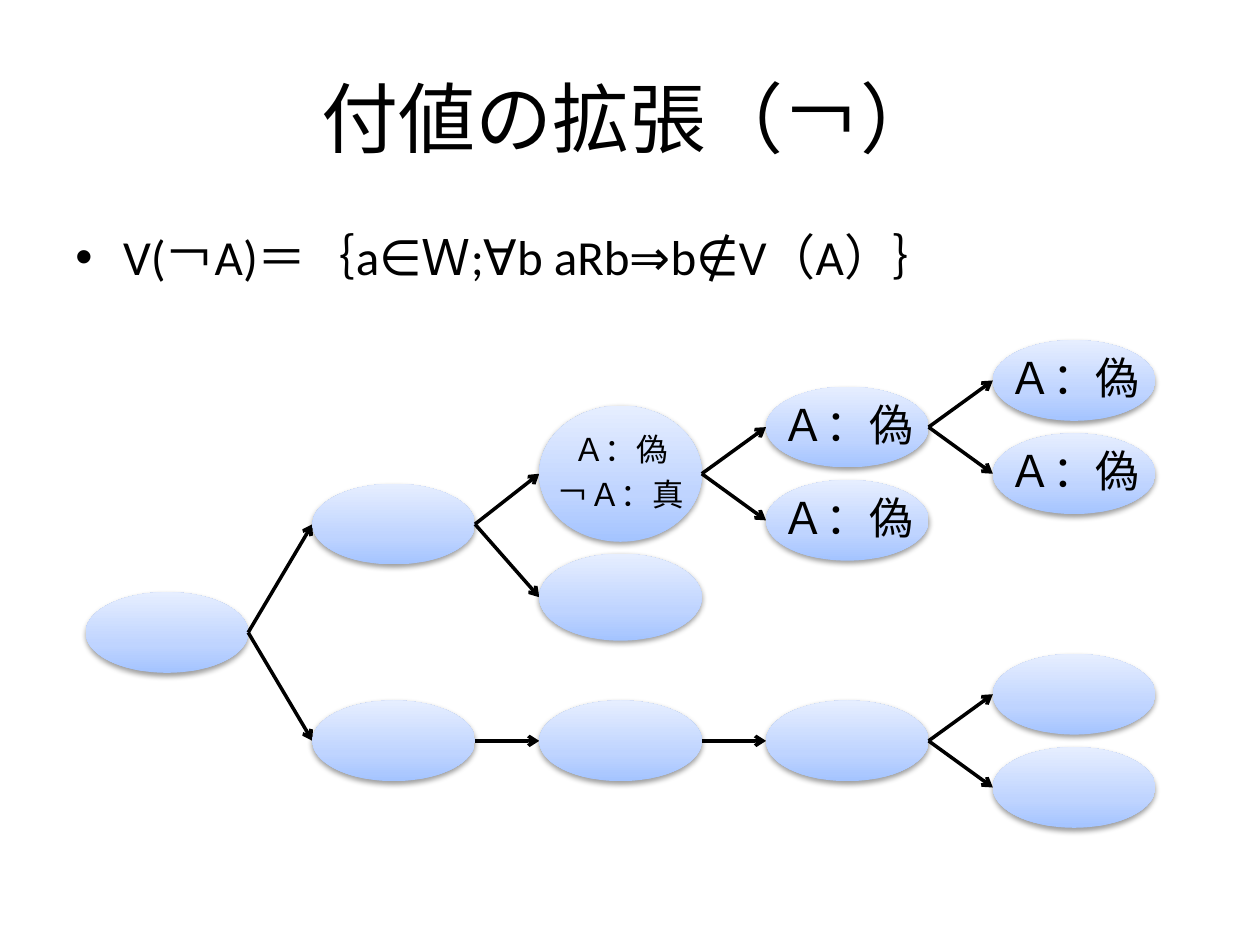
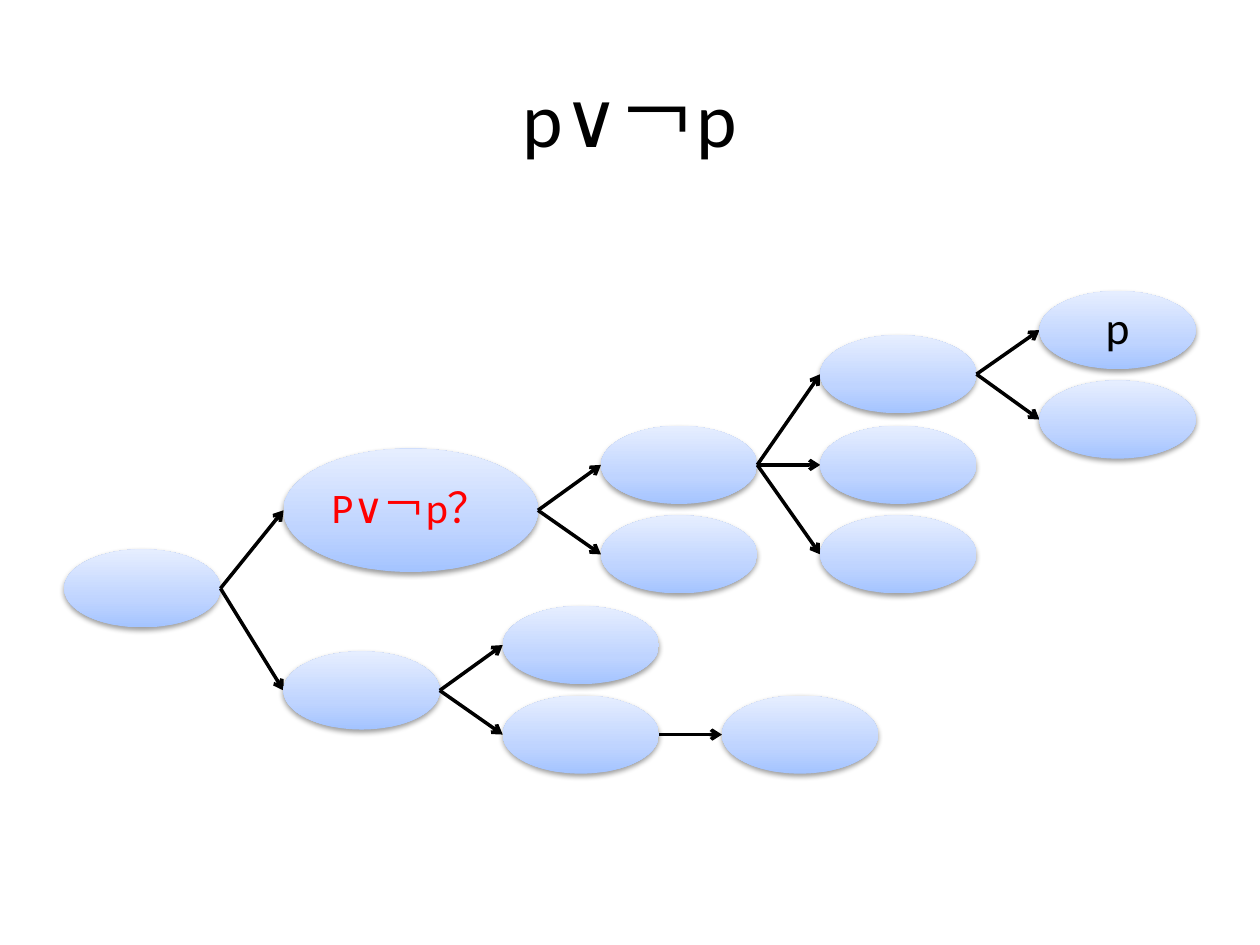
from dataclasses import dataclass

import pptx
import pptx.dml.color
import pptx.enum.shapes
import pptx.enum.text
import pptx.oxml
import pptx.oxml.ns
import pptx.presentation
import pptx.shapes.autoshape
import pptx.slide
import pptx.text.text
import pptx.util
from lxml import etree
from pptx.dml.color import RGBColor
from pptx.util import Inches

FONT = "Calibri"
BLACK = RGBColor(0x00, 0x00, 0x00)
RED = RGBColor(0xFF, 0x00, 0x00)
GRADIENT = (
    (0, RGBColor(0xA4, 0xC4, 0xFF)),
    (35, RGBColor(0xBF, 0xD4, 0xFF)),
    (100, RGBColor(0xE6, 0xEE, 0xFF)),
)


@dataclass(frozen=True)
class World:
    middle: float
    successors: tuple["World", ...] = ()
    label: str = ""
    size: float = 25
    color: RGBColor = BLACK
    width: float | None = None
    height: float | None = None


@dataclass(frozen=True)
class Frame:
    left: float
    width: float
    height: float
    gap: float
    root: World


@dataclass(frozen=True)
class Page:
    title: str
    frame: Frame
    definition: str = ""


def false_world(middle: float, *successors: World) -> World:
    return World(middle, successors, "Ａ：偽")


NEGATION = Frame(0.68, 1.29, 0.64, 0.51, World(5.02, (
    World(4.16, (
        World(3.76, (
            false_world(3.39, false_world(3.02), false_world(3.76)),
            false_world(4.13),
        ), "Ａ：偽\n￢Ａ：真", 18, height=1.08),
        World(4.74, height=0.69),
    )),
    World(5.88, (World(5.88, (World(5.88, (World(5.51), World(6.25))),)),)),
)))

EXCLUDED_MIDDLE = Frame(0.51, 1.24, 0.62, 0.5, World(4.67, (
    World(4.05, (
        World(3.69, (
            World(2.97, (World(2.62, label="p", size=26), World(3.33))),
            World(3.69),
            World(4.4),
        )),
        World(4.4),
    ), "P∨￢p？", 24, RED, 2.02, 0.98),
    World(5.48, (World(5.12), World(5.83, (World(5.83),)))),
)))

PAGES = (
    Page("付値の拡張（￢）", NEGATION, "V(￢A)＝｛a∈Ｗ;∀b aRb⇒b∉V（A）｝"),
    Page("p∨￢p", EXCLUDED_MIDDLE),
)


def add_child(parent: etree._Element, tag: str, **attributes: str) -> etree._Element:
    return etree.SubElement(parent, pptx.oxml.ns.qn(tag), **attributes)


def format_runs(paragraph: pptx.text.text._Paragraph, size: float, color: RGBColor) -> None:
    for run in paragraph.runs:
        run.font.name = FONT
        run.font.size = pptx.util.Pt(size)
        run.font.color.rgb = color


def add_text(slide: pptx.slide.Slide, text: str, top: float, height: float,
             size: float) -> pptx.text.text.TextFrame:
    box = slide.shapes.add_textbox(Inches(0.5), Inches(top), Inches(9), Inches(height))
    frame = box.text_frame
    frame.word_wrap = True
    frame.text = text
    format_runs(frame.paragraphs[0], size, BLACK)
    return frame


def add_title(slide: pptx.slide.Slide, title: str) -> None:
    frame = add_text(slide, title, 0.3, 1.25, 44)
    frame.vertical_anchor = pptx.enum.text.MSO_ANCHOR.MIDDLE
    frame.paragraphs[0].alignment = pptx.enum.text.PP_ALIGN.CENTER


def add_definition(slide: pptx.slide.Slide, definition: str) -> None:
    paragraph = add_text(slide, definition, 1.75, 4.95, 28).paragraphs[0]
    paragraph.space_before = pptx.util.Pt(5.6)
    properties = paragraph._p.get_or_add_pPr()
    indent = Inches(0.38)
    properties.set("marL", str(indent))
    properties.set("indent", str(-indent))
    add_child(properties, "a:buFont", typeface="Arial")
    add_child(properties, "a:buChar", char="•")


def style_world(ellipse: pptx.shapes.autoshape.Shape) -> None:
    ellipse.line.fill.background()
    ellipse.fill.gradient()
    ellipse.fill.gradient_angle = 90
    properties = ellipse._element.spPr
    stops = properties.find(".//" + pptx.oxml.ns.qn("a:gsLst"))
    stops.clear()
    for position, color in GRADIENT:
        stop = add_child(stops, "a:gs", pos=str(position * 1000))
        add_child(stop, "a:srgbClr", val=str(color))
    ellipse.shadow.inherit = False
    effects = properties.find(pptx.oxml.ns.qn("a:effectLst"))
    shadow = add_child(effects, "a:outerShdw", blurRad="40000", dist="20000",
                       dir="5400000", rotWithShape="0")
    shade = add_child(shadow, "a:srgbClr", val=str(BLACK))
    add_child(shade, "a:alpha", val="38000")


def write_label(ellipse: pptx.shapes.autoshape.Shape, world: World) -> None:
    frame = ellipse.text_frame
    frame.word_wrap = False
    frame.vertical_anchor = pptx.enum.text.MSO_ANCHOR.MIDDLE
    frame.margin_left = frame.margin_right = Inches(0.02)
    frame.margin_top = frame.margin_bottom = Inches(0.02)
    frame.text = world.label
    for paragraph in frame.paragraphs:
        paragraph.alignment = pptx.enum.text.PP_ALIGN.CENTER
        paragraph.line_spacing = 0.9
        paragraph.space_after = pptx.util.Pt(round(world.size * 0.35, 1))
        format_runs(paragraph, world.size, world.color)


def add_arrow(slide: pptx.slide.Slide, left: float, start: float,
              right: float, end: float) -> None:
    arrow = slide.shapes.add_connector(
        pptx.enum.shapes.MSO_CONNECTOR.STRAIGHT,
        Inches(left), Inches(start), Inches(right), Inches(end))
    arrow.line.color.rgb = BLACK
    arrow.line.width = pptx.util.Pt(2)
    add_child(arrow.line._get_or_add_ln(), "a:tailEnd", type="arrow")
    add_child(arrow._element.spPr, "a:effectLst")


def add_world(slide: pptx.slide.Slide, frame: Frame, world: World, left: float) -> None:
    width = world.width or frame.width
    height = world.height or frame.height
    ellipse = slide.shapes.add_shape(
        pptx.enum.shapes.MSO_SHAPE.OVAL, Inches(left),
        Inches(world.middle - height / 2), Inches(width), Inches(height))
    style_world(ellipse)
    if world.label:
        write_label(ellipse, world)
    right = left + width
    for successor in world.successors:
        add_arrow(slide, right, world.middle, right + frame.gap, successor.middle)
        add_world(slide, frame, successor, right + frame.gap)


def add_page(deck: pptx.presentation.Presentation, page: Page) -> None:
    slide = deck.slides.add_slide(deck.slide_layouts[6])
    add_title(slide, page.title)
    if page.definition:
        add_definition(slide, page.definition)
    add_world(slide, page.frame, page.frame.root, page.frame.left)


def main() -> None:
    deck = pptx.Presentation()
    deck.slide_width = Inches(10)
    deck.slide_height = Inches(7.5)
    for page in PAGES:
        add_page(deck, page)
    deck.save("out.pptx")


if __name__ == "__main__":
    main()
